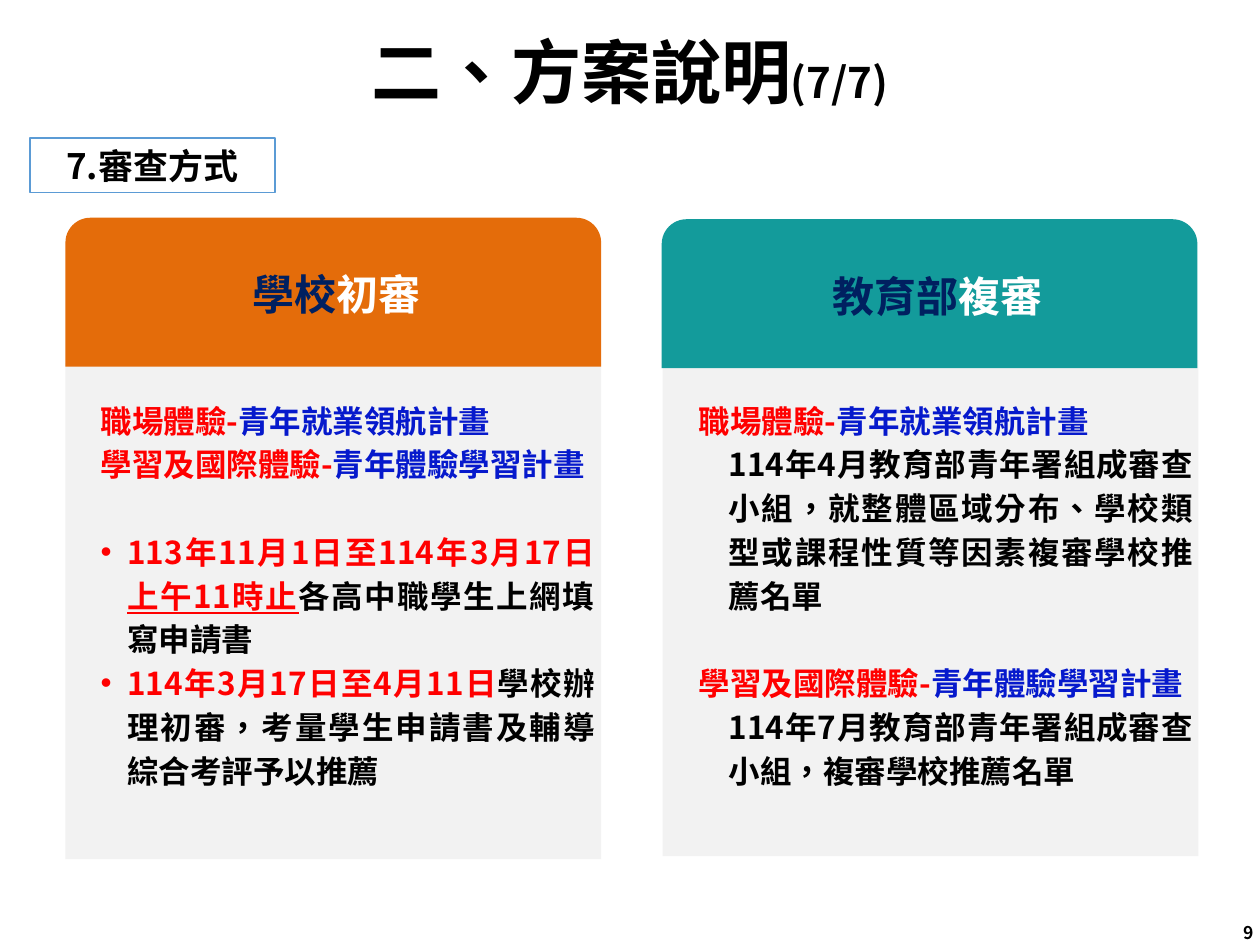
from lxml import etree
from pptx import Presentation
from pptx import util as u
from pptx.dml.color import RGBColor
from pptx.enum import shapes, text
from pptx.oxml.ns import qn

FONT = "Noto Sans CJK SC"
BLACK, WHITE, NAVY = "000000", "FFFFFF", "002060"
RED, BLUE, GREY = "FF0000", "0619CC", "F2F2F2"
CENTER, JUSTIFY, RIGHT = text.PP_ALIGN.CENTER, text.PP_ALIGN.JUSTIFY, text.PP_ALIGN.RIGHT
MIDDLE, TOP = text.MSO_ANCHOR.MIDDLE, text.MSO_ANCHOR.TOP


def write(shape, paragraphs, size, align, anchor=MIDDLE, spacing=None, **margins):
    """Fill a shape; each paragraph is (style, runs), each run (text, colour, font values)."""
    frame = shape.text_frame
    values = {"word_wrap": True, "auto_size": text.MSO_AUTO_SIZE.NONE,
              "vertical_anchor": anchor, **margins}
    for name, value in values.items():
        setattr(frame, name, value)
    for index, (style, runs) in enumerate(paragraphs):
        paragraph = frame.add_paragraph() if index else frame.paragraphs[0]
        properties = paragraph._p.get_or_add_pPr()
        if "indent" in style:
            properties.set("marL", str(u.Cm(style["indent"])))
            properties.set("indent", str(u.Cm(-style["indent"] if style.get("bullet") else 0)))
        if style.get("bullet"):
            etree.SubElement(properties, qn("a:buFont")).set("typeface", "Arial")
            etree.SubElement(properties, qn("a:buChar")).set("char", "•")
        paragraph.alignment = align
        paragraph.line_spacing = spacing
        if "before" in style:
            paragraph.space_before = u.Pt(style["before"])
        for words, colour, extra in runs:
            run = paragraph.add_run()
            run.text = words
            font = {"name": FONT, "size": u.Pt(size), "bold": True, **extra}
            for name, value in font.items():
                setattr(run.font, name, value)
            run.font.color.rgb = RGBColor.from_string(colour)
            run_properties = run._r.get_or_add_rPr()
            run_properties.set("lang", "zh-TW")
            etree.SubElement(run_properties, qn("a:ea")).set("typeface", FONT)


def add_box(kind, left, top, width, height, fill, line=None):
    shape = slide.shapes.add_shape(kind, *map(u.Cm, (left, top, width, height)))
    shape.shadow.inherit = False
    shape.fill.solid()
    shape.fill.fore_color.rgb = RGBColor.from_string(fill)
    if line:
        shape.line.color.rgb = RGBColor.from_string(line)
        shape.line.width = u.Pt(1)
    else:
        shape.line.fill.background()
    return shape


presentation = Presentation()
presentation.slide_width, presentation.slide_height = u.Cm(25.4), u.Cm(19.05)
slide = presentation.slides.add_slide(presentation.slide_layouts[5])

title = slide.shapes.title
title.left, title.top, title.width, title.height = map(u.Cm, (1.75, 0.38, 21.9, 2.31))
write(title, [({}, [("二、方案說明", BLACK, {}), ("(7/7)", BLACK, {"size": u.Pt(24)})])],
      40, CENTER, spacing=0.9)

page_number = slide.shapes.add_textbox(*map(u.Cm, (19.81, 18.29, 5.72, 1.02)))
write(page_number, [({}, [("9", BLACK, {})])], 10, RIGHT)

section = add_box(shapes.MSO_SHAPE.RECTANGLE, 0.61, 2.79, 4.93, 1.09, WHITE, "5B9BD5")
write(section, [({}, [("7.審查方式", BLACK, {})])], 20, CENTER)

work = [("職場體驗-", RED, {}), ("青年就業領航計畫", BLUE, {})]
study = [("學習及國際體驗-", RED, {}), ("青年體驗學習計畫", BLUE, {})]
bullet = {"indent": 0.54, "bullet": True}
detail = {"indent": 0.6}

cards = [
    {"header": (1.32, 4.39), "body": (1.32, 7.32), "label": (2.29, 5.23), "text_left": 1.5,
     "colour": "E46C0A", "who": "學校", "step": "初審",
     "paragraphs": [
         ({}, work),
         ({}, study),
         ({**bullet, "before": 25}, [
             ("113年11月1日至114年3月17日", RED, {}),
             ("上午11時止", RED, {"underline": True}),
             ("各高中職學生上網填寫申請書", BLACK, {})]),
         (bullet, [
             ("114年3月17日至4月11日", RED, {}),
             ("學校辦理初審，考量學生申請書及輔導綜合考評予以推薦", BLACK, {})])]},
    {"header": (13.34, 4.42), "body": (13.36, 7.26), "label": (14.4, 5.26), "text_left": 13.56,
     "colour": "139B9B", "who": "教育部", "step": "複審",
     "paragraphs": [
         ({}, work),
         (detail, [("114年4月教育部青年署組成審查小組，就整體區域分布、"
                    "學校類型或課程性質等因素複審學校推薦名單", BLACK, {})]),
         ({"before": 25}, study),
         (detail, [("114年7月教育部青年署組成審查小組，複審學校推薦名單", BLACK, {})])]},
]
for card in cards:
    add_box(shapes.MSO_SHAPE.RECTANGLE, *card["body"], 10.8, 10, GREY)
    add_box(shapes.MSO_SHAPE.ROUND_2_SAME_RECTANGLE, *card["header"], 10.8, 3, card["colour"])
    content = slide.shapes.add_textbox(*map(u.Cm, (card["text_left"], 7.85, 10.49, 9.47)))
    write(content, card["paragraphs"], 18, JUSTIFY, TOP, u.Pt(25),
          margin_left=u.Cm(0.53), margin_right=u.Cm(0))
    label = slide.shapes.add_textbox(*map(u.Cm, (*card["label"], 8.99, 1.3)))
    write(label, [({}, [(card["who"], NAVY, {}), (card["step"], WHITE, {})])],
          24, CENTER, spacing=1.1)

presentation.save("out.pptx")
